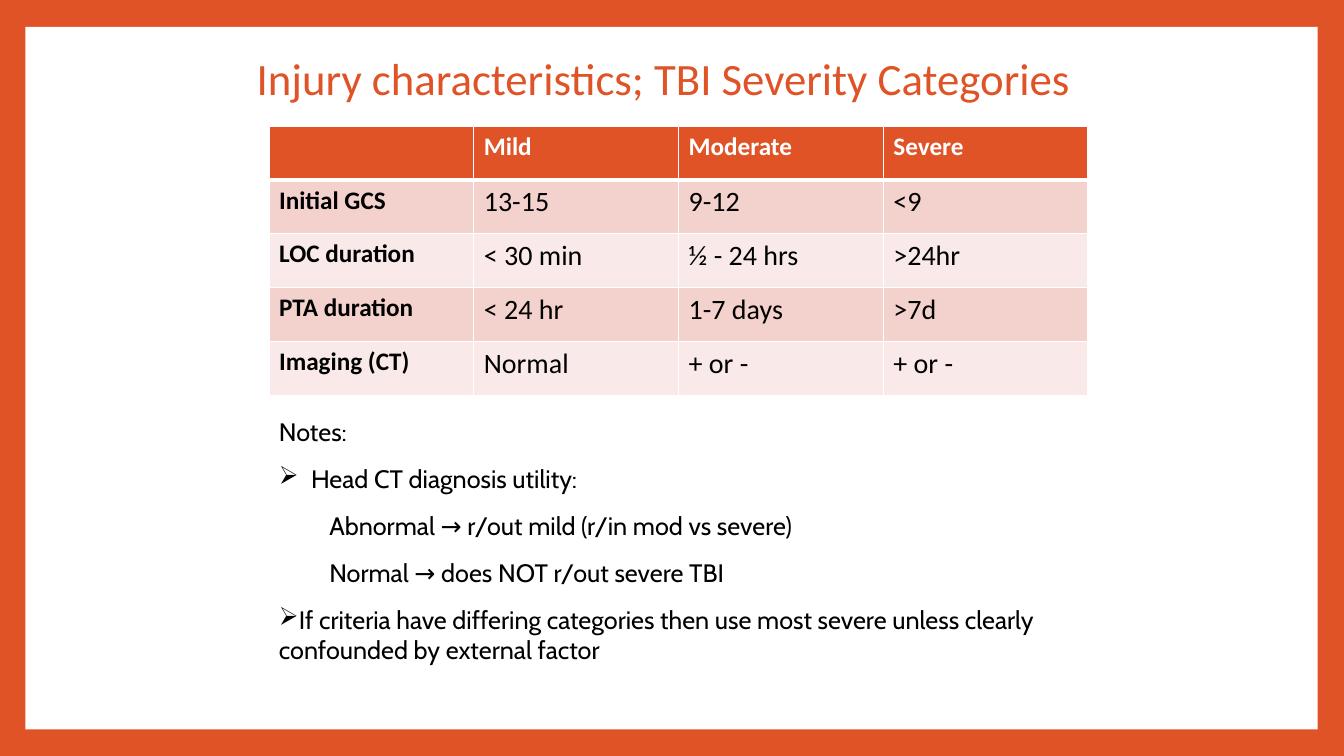
"""Build the slide on injury characteristics and TBI severity categories."""
from dataclasses import dataclass

from lxml.etree import SubElement
from pptx import Presentation
from pptx.dml.color import RGBColor
from pptx.enum.shapes import MSO_SHAPE
from pptx.enum.text import MSO_ANCHOR
from pptx.oxml.ns import qn
from pptx.util import Cm, Pt

COLOURS = {
    "accent": "DF5327",
    "panel": "FFFFFF",
    "text": "000000",
    "band_dark": "F3D1CD",
    "band_light": "F9E9E8",
}

HEADER = ("", "Mild", "Moderate", "Severe")
CRITERIA = (
    ("Initial GCS", "13-15", "9-12", "<9"),
    ("LOC duration", "< 30 min", "½ - 24 hrs", ">24hr"),
    ("PTA duration", "< 24 hr", "1-7 days", ">7d"),
    ("Imaging (CT)", "Normal", "+ or -", "+ or -"),
)


@dataclass(frozen=True)
class Note:
    text: str
    before: float = 12
    level: int = 0
    margin: float = 0
    indent: float = 0
    bullet: str = ""


NOTES = (
    Note("Notes:", before=0),
    Note("Head CT diagnosis utility:", margin=0.81, indent=-0.81, bullet="➢"),
    Note("Abnormal → r/out mild (r/in mod vs severe)", level=1, margin=1.27),
    Note("Normal → does NOT r/out severe TBI", level=1, margin=1.27),
    Note(
        "If criteria have differing categories then use most severe "
        "unless clearly confounded by external factor",
        bullet="➢",
    ),
)


def colour(name: str) -> RGBColor:
    return RGBColor.from_string(COLOURS[name])


def write(paragraph, text: str, *, size: float = 18, font: str = "Calibri",
          ink: str = "text", bold: bool = False) -> None:
    span = paragraph.add_run()
    span.text = text
    span.font.name = font
    span.font.size = Pt(size)
    span.font.bold = bold
    span.font.color.rgb = colour(ink)


def add_box(page, left: float, top: float, width: float, height: float):
    box = page.shapes.add_textbox(Cm(left), Cm(top), Cm(width), Cm(height))
    box.text_frame.word_wrap = True
    return box.text_frame


def draw_panel(page) -> None:
    panel = page.shapes.add_shape(
        MSO_SHAPE.RECTANGLE, Cm(0.64), Cm(0.68), Cm(32.57), Cm(17.7))
    panel.shadow.inherit = False
    panel.fill.solid()
    panel.fill.fore_color.rgb = colour("panel")
    panel.line.fill.background()


def draw_title(page) -> None:
    frame = add_box(page, 6.22, 0.66, 24, 2.74)
    frame.vertical_anchor = MSO_ANCHOR.MIDDLE
    paragraph = frame.paragraphs[0]
    paragraph.line_spacing = 0.9
    write(paragraph, "Injury characteristics; TBI Severity Categories",
          size=32, ink="accent")


def set_borders(cell, top: float, bottom: float) -> None:
    properties = cell._tc.get_or_add_tcPr()
    widths = {"a:lnL": 1, "a:lnR": 1, "a:lnT": top, "a:lnB": bottom}
    for position, (side, width) in enumerate(widths.items()):
        line = SubElement(properties, qn(side), w=str(Pt(width)))
        fill = SubElement(line, qn("a:solidFill"))
        SubElement(fill, qn("a:srgbClr"), val=COLOURS["panel"])
        properties.insert(position, line)


def draw_table(page) -> None:
    rows = (HEADER, *CRITERIA)
    table = page.shapes.add_table(
        len(rows), len(HEADER), Cm(6.78), Cm(3.18), Cm(20.64), Cm(6.78)).table
    for row_index, row in enumerate(rows):
        is_header = row_index == 0
        band = "band_dark" if row_index % 2 else "band_light"
        for column_index, text in enumerate(row):
            cell = table.cell(row_index, column_index)
            cell.fill.solid()
            cell.fill.fore_color.rgb = colour("accent" if is_header else band)
            set_borders(cell, top=3 if row_index == 1 else 1,
                        bottom=3 if is_header else 1)
            is_label = is_header or column_index == 0
            if text:
                write(cell.text_frame.paragraphs[0], text,
                      size=18 if is_label else 20, bold=is_label,
                      ink="panel" if is_header else "text")


def draw_notes(page) -> None:
    frame = add_box(page, 6.78, 10.36, 20.96, 7.34)
    for index, note in enumerate(NOTES):
        paragraph = frame.add_paragraph() if index else frame.paragraphs[0]
        paragraph.level = note.level
        paragraph.space_before = Pt(note.before)
        properties = paragraph._p.get_or_add_pPr()
        properties.set("marL", str(Cm(note.margin)))
        properties.set("indent", str(Cm(note.indent)))
        if note.bullet:
            SubElement(properties, qn("a:buChar"), char=note.bullet)
        write(paragraph, note.text, font="Cabin")


def main() -> None:
    deck = Presentation()
    deck.slide_width, deck.slide_height = Cm(33.87), Cm(19.05)
    page = deck.slides.add_slide(deck.slide_layouts[6])
    page.background.fill.solid()
    page.background.fill.fore_color.rgb = colour("accent")
    draw_panel(page)
    draw_title(page)
    draw_table(page)
    draw_notes(page)
    deck.save("out.pptx")


if __name__ == "__main__":
    main()
